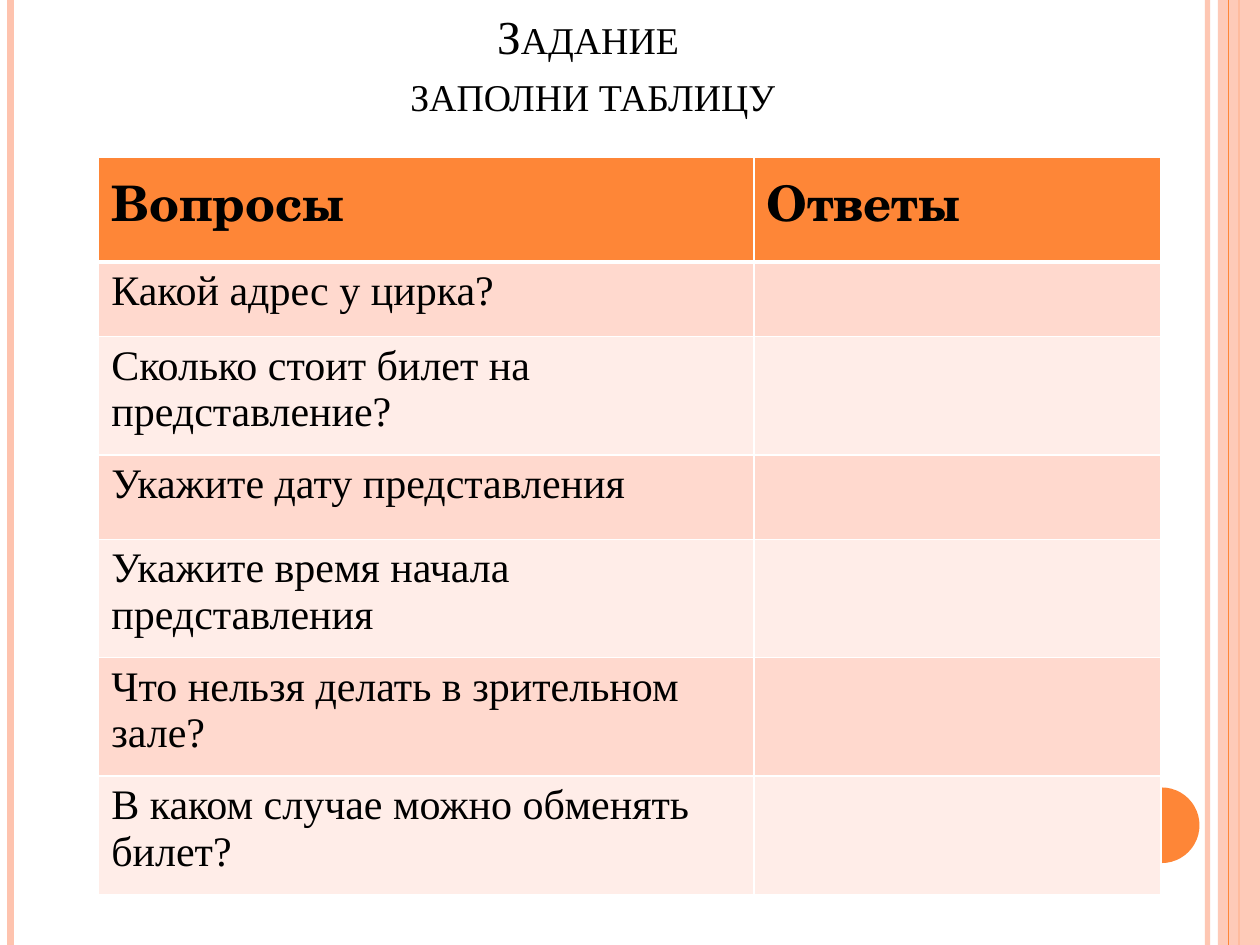
from lxml.etree import SubElement
from pptx import Presentation
from pptx.dml.color import RGBColor
from pptx.enum.shapes import MSO_CONNECTOR as Connector, MSO_SHAPE as Shape
from pptx.enum.text import MSO_ANCHOR as Anchor, PP_ALIGN as Align
from pptx.oxml import parse_xml
from pptx.oxml.ns import nsdecls, qn
from pptx.util import Pt

BLACK = RGBColor(0x00, 0x00, 0x00)
WHITE = RGBColor(0xFF, 0xFF, 0xFF)
ORANGE = RGBColor(0xFE, 0x86, 0x37)
PEACH = RGBColor(0xFE, 0xC3, 0xAE)
BAND_DARK = RGBColor(0xFF, 0xD9, 0xCE)
BAND_LIGHT = RGBColor(0xFF, 0xED, 0xE8)

PAGE_WIDTH, PAGE_HEIGHT = 720, 540
TITLE = ["Задание ", "заполни таблицу"]
HEADINGS = ["Вопросы", "Ответы"]
QUESTIONS = [
    "Какой адрес у цирка?",
    "Сколько стоит билет на представление?",
    "Укажите дату представления",
    "Укажите время начала представления",
    "Что нельзя делать в зрительном зале?",
    "В каком случае можно обменять билет?",
]
COLUMN_WIDTHS = [374.4, 232.6]
HEADING_HEIGHT = 59.8
QUESTION_HEIGHTS = [42.5, 67.7, 48.2, 67.7, 67.7, 67.7]


class SlideBuilder:
    formats = {
        "title": {"name": "Times New Roman", "size": Pt(27), "bold": False},
        "heading": {"name": "TeX Gyre Schola", "size": Pt(28), "bold": True},
        "question": {"name": "Times New Roman", "size": Pt(24), "bold": False},
    }

    def __init__(self, page):
        self.page = page

    def set_opacity(self, element, percent):
        color = next(element.iter(qn("a:srgbClr")))
        SubElement(color, qn("a:alpha"), val=str(percent * 1000))

    def span(self, para, text, style):
        span = para.add_run()
        span.text = text
        for key, value in self.formats[style].items():
            setattr(span.font, key, value)
        span.font.color.rgb = BLACK
        return span

    def stripe(self, x, color, width, opacity=100):
        """Draw a vertical line over the full height of the page."""
        line = self.page.shapes.add_connector(
            Connector.STRAIGHT, Pt(x), 0, Pt(x), Pt(PAGE_HEIGHT))
        line.line.color.rgb = color
        line.line.width = Pt(width)
        properties = line._element.spPr
        SubElement(properties, qn("a:effectLst"))
        if opacity < 100:
            self.set_opacity(properties, opacity)

    def shape(self, kind, left, top, width, height, color, opacity=100):
        shape = self.page.shapes.add_shape(
            kind, Pt(left), Pt(top), Pt(width), Pt(height))
        shape.shadow.inherit = False
        shape.fill.solid()
        shape.fill.fore_color.rgb = color
        shape.line.fill.background()
        if opacity < 100:
            self.set_opacity(shape._element.spPr, opacity)

    def title(self, lines, left, top, width, height):
        box = self.page.shapes.add_textbox(
            Pt(left), Pt(top), Pt(width), Pt(height))
        frame = box.text_frame
        frame.word_wrap = True
        frame.vertical_anchor = Anchor.BOTTOM
        para = frame.paragraphs[0]
        para.alignment = Align.CENTER
        for index, text in enumerate(lines):
            if index:
                para.add_line_break()
            span = self.span(para, text, "title")
            span._r.get_or_add_rPr().set("cap", "small")

    def borders(self, cell, widths):
        """Draw white borders; widths holds left, right, top and bottom."""
        properties = cell._tc.get_or_add_tcPr()
        for index, (side, width) in enumerate(zip("LRTB", widths)):
            properties.insert(index, parse_xml(
                f'<a:ln{side} {nsdecls("a")} w="{Pt(width)}"><a:solidFill>'
                f'<a:srgbClr val="{WHITE}"/></a:solidFill></a:ln{side}>'))

    def cell(self, cell, text, style, color, border_widths):
        cell.fill.solid()
        cell.fill.fore_color.rgb = color
        self.borders(cell, border_widths)
        if text:
            self.span(cell.text_frame.paragraphs[0], text, style)

    def table(self, left, top):
        heights = [HEADING_HEIGHT, *QUESTION_HEIGHTS]
        table = self.page.shapes.add_table(
            len(heights), len(COLUMN_WIDTHS), Pt(left), Pt(top),
            Pt(sum(COLUMN_WIDTHS)), Pt(sum(heights))).table
        for column, width in zip(table.columns, COLUMN_WIDTHS):
            column.width = Pt(width)
        for row, height in zip(table.rows, heights):
            row.height = Pt(height)
        for cell, text in zip(table.rows[0].cells, HEADINGS):
            self.cell(cell, text, "heading", ORANGE, (1, 1, 1, 3))
        for number, question in enumerate(QUESTIONS, start=1):
            color = BAND_DARK if number % 2 else BAND_LIGHT
            top_width = 3 if number == 1 else 1
            for cell, text in zip(table.rows[number].cells, (question, "")):
                self.cell(cell, text, "question", color, (1, 1, top_width, 1))


def main():
    deck = Presentation()
    deck.slide_width, deck.slide_height = Pt(PAGE_WIDTH), Pt(PAGE_HEIGHT)
    builder = SlideBuilder(deck.slides.add_slide(deck.slide_layouts[6]))

    builder.stripe(690, PEACH, 3, opacity=93)
    builder.stripe(6, PEACH, 4.5)
    builder.stripe(708, ORANGE, 1.5)
    builder.shape(Shape.RECTANGLE, 696, 0, 24, PAGE_HEIGHT, PEACH, opacity=87)
    builder.stripe(702, ORANGE, 0.75)
    builder.shape(Shape.OVAL, 642.24, 450, 43.2, 43.2, ORANGE)

    builder.title(TITLE, 44.64, 22.32, 588.24, 50.4)
    builder.table(56.4, 90)
    deck.save("out.pptx")


if __name__ == "__main__":
    main()
